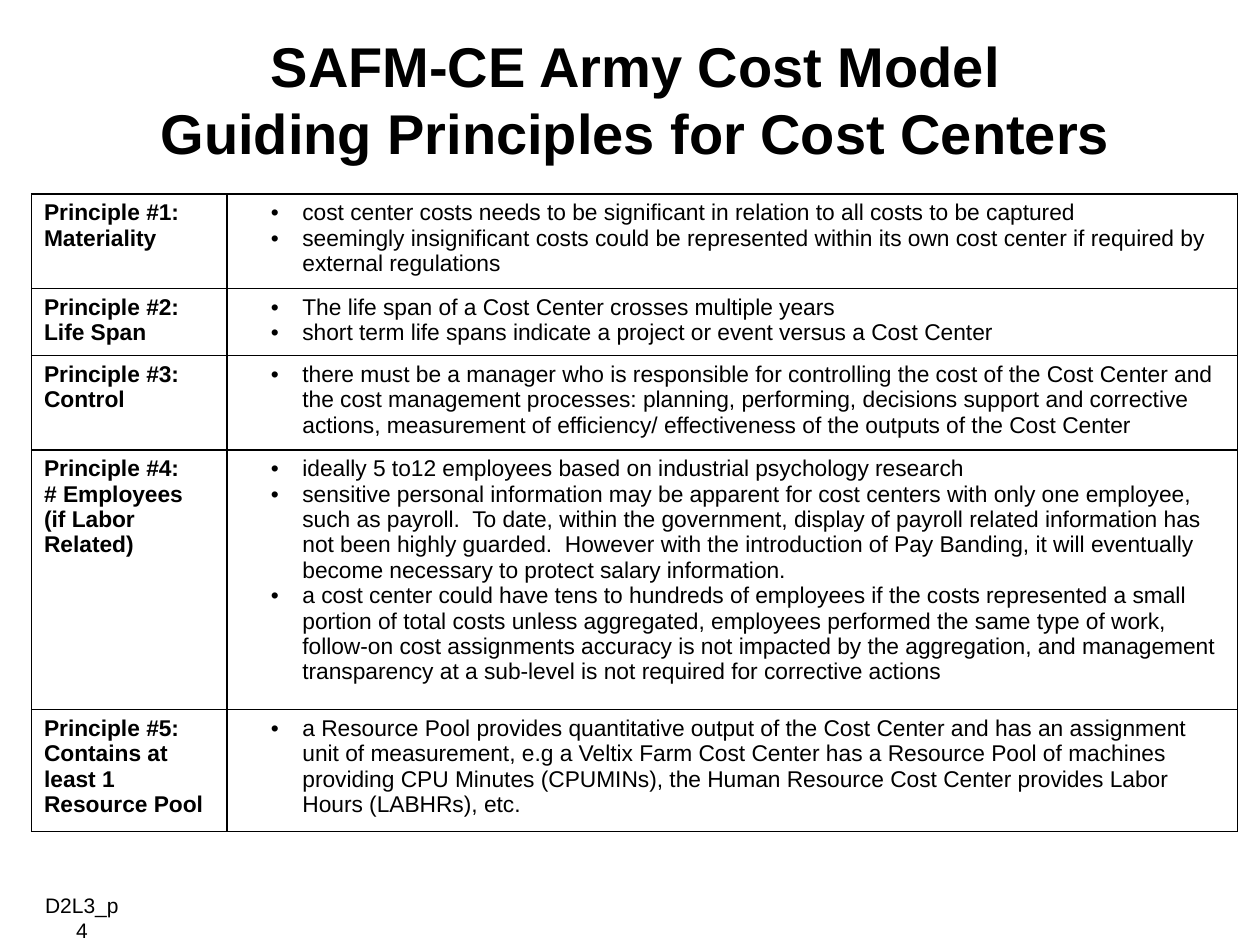
from pptx import Presentation
from pptx.dml.color import RGBColor
from pptx.enum.text import MSO_ANCHOR, PP_ALIGN
from pptx.oxml.xmlchemy import OxmlElement
from pptx.util import Inches, Pt

COLORS = {"ink": "000000", "paper": "FFFFFF"}
FONT = "Arial"
COLUMNS = (1.55, 8.02)
ROW_HEIGHTS = (0.75, 0.53, 0.75, 2.06, 0.97)

PRINCIPLES = [
    ("Principle #1:\vMateriality", [
        "cost center costs needs to be significant in relation to all costs to be captured",
        "seemingly insignificant costs could be represented within its own cost center if "
        "required by external regulations",
    ]),
    ("Principle #2:\vLife Span", [
        "The life span of a Cost Center crosses multiple years",
        "short term life spans indicate a project or event versus a Cost Center",
    ]),
    ("Principle #3:\vControl", [
        "there must be a manager who is responsible for controlling the cost of the Cost "
        "Center and the cost management processes: planning, performing, decisions support "
        "and corrective actions, measurement of efficiency/ effectiveness of the outputs of "
        "the Cost Center",
    ]),
    ("Principle #4:\v# Employees\n(if Labor Related)", [
        "ideally 5 to12 employees based on industrial psychology research",
        "sensitive personal information may be apparent for cost centers with only one "
        "employee, such as payroll.  To date, within the government, display of payroll "
        "related information has not been highly guarded.  However with the introduction of "
        "Pay Banding, it will eventually become necessary to protect salary information.",
        "a cost center could have tens to hundreds of employees if the costs represented a "
        "small portion of total costs unless aggregated, employees performed the same type of "
        "work, follow-on cost assignments accuracy is not impacted by the aggregation, and "
        "management transparency at a sub-level is not required for corrective actions",
    ]),
    ("Principle #5: Contains at least 1 Resource Pool", [
        "a Resource Pool provides quantitative output of the Cost Center and has an "
        "assignment unit of measurement, e.g a Veltix Farm Cost Center has a Resource Pool of "
        "machines providing CPU Minutes (CPUMINs), the Human Resource Cost Center provides "
        "Labor Hours (LABHRs), etc.",
    ]),
]


def color(name):
    return RGBColor.from_string(COLORS[name])


def add_bullet(paragraph):
    properties = paragraph._p.get_or_add_pPr()
    properties.set("marL", str(Inches(0.5)))
    properties.set("indent", str(Inches(-0.25)))
    properties.set("lvl", "1")
    bullet_font = OxmlElement("a:buFont")
    bullet_font.set("typeface", FONT)
    bullet = OxmlElement("a:buChar")
    bullet.set("char", "•")
    properties.extend([bullet_font, bullet])


def write(frame, text, size, bold=False, align=PP_ALIGN.LEFT, bullets=False):
    frame.text = text
    for paragraph in frame.paragraphs:
        if bullets:
            add_bullet(paragraph)
        paragraph.alignment = align
        for run in paragraph.runs:
            run.font.name = FONT
            run.font.size = Pt(size)
            run.font.bold = bold
            run.font.color.rgb = color("ink")


def set_margins(frame):
    frame.margin_left = frame.margin_right = Inches(0.1)
    frame.margin_top = frame.margin_bottom = 0
    frame.word_wrap = True


def add_borders(cell):
    properties = cell._tc.get_or_add_tcPr()
    for position, side in enumerate(("lnL", "lnR", "lnT", "lnB")):
        line = OxmlElement(f"a:{side}")
        line.set("w", str(Pt(1)))
        fill = OxmlElement("a:solidFill")
        ink = OxmlElement("a:srgbClr")
        ink.set("val", COLORS["ink"])
        fill.append(ink)
        line.append(fill)
        properties.insert(position, line)


def place_title(slide, left, top, width, height):
    title = slide.shapes.title
    title.left, title.top, title.width, title.height = map(Inches, (left, top, width, height))
    set_margins(title.text_frame)
    title.text_frame.vertical_anchor = MSO_ANCHOR.MIDDLE
    write(title.text_frame, "SAFM-CE Army Cost Model\vGuiding Principles for Cost Centers",
          size=32, bold=True, align=PP_ALIGN.CENTER)


def place_principles(slide, left, top):
    table = slide.shapes.add_table(
        len(PRINCIPLES), len(COLUMNS), Inches(left), Inches(top),
        Inches(sum(COLUMNS)), Inches(sum(ROW_HEIGHTS))).table
    table.first_row = table.horz_banding = False
    for column, width in zip(table.columns, COLUMNS):
        column.width = Inches(width)
    for row, height, (principle, points) in zip(table.rows, ROW_HEIGHTS, PRINCIPLES):
        row.height = Inches(height)
        name_cell, points_cell = row.cells
        write(name_cell.text_frame, principle, size=13, bold=True)
        write(points_cell.text_frame, "\n".join(points), size=13, bullets=True)
        for cell in row.cells:
            cell.fill.solid()
            cell.fill.fore_color.rgb = color("paper")
            add_borders(cell)


def place_page_label(slide, left, top, width, height):
    label = slide.shapes.add_textbox(*map(Inches, (left, top, width, height)))
    set_margins(label.text_frame)
    write(label.text_frame, "D2L3_p4", size=12, align=PP_ALIGN.CENTER)


def main():
    deck = Presentation()
    deck.slide_width, deck.slide_height = Inches(10), Inches(7.5)
    slide = deck.slides.add_slide(deck.slide_layouts[5])
    place_title(slide, 1.17, 0.25, 7.75, 1.07)
    place_principles(slide, 0.25, 1.54)
    place_page_label(slide, 0.25, 7.08, 0.8, 0.4)
    deck.save("out.pptx")


if __name__ == "__main__":
    main()
